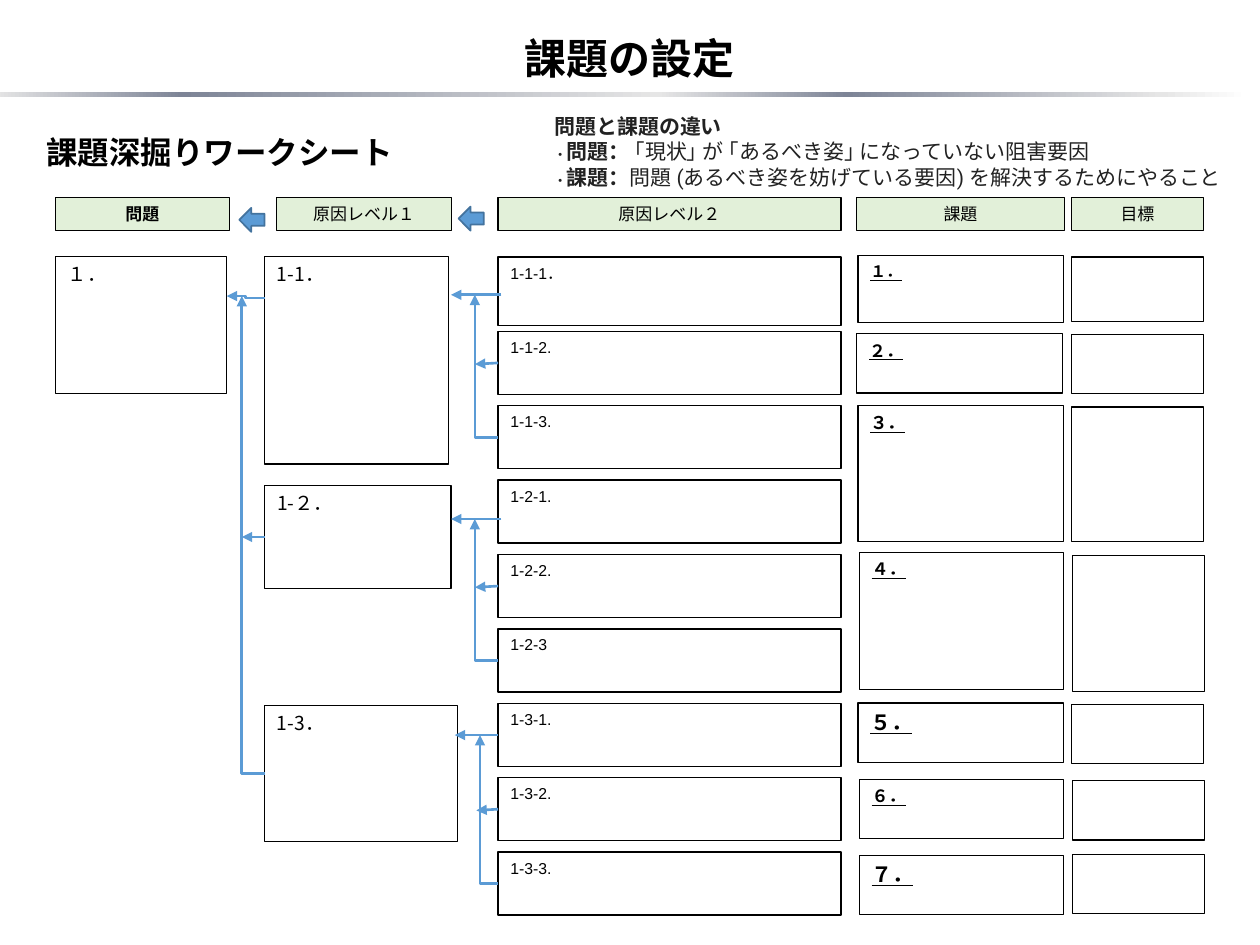
from dataclasses import dataclass

from lxml import etree
from pptx import Presentation
from pptx.dml.color import RGBColor
from pptx.enum import shapes, text
from pptx.oxml.ns import qn
from pptx.util import Pt

COLORS = {"ink": "000000", "note": "222222", "header": "E2F0D9", "arrow": "5B9BD5",
          "arrow_edge": "43739E", "white": "FFFFFF", "pale": "E6E6E6", "slate": "7D8496"}
CJK = "Noto Sans CJK JP"
RECT = shapes.MSO_SHAPE.RECTANGLE
STRAIGHT, ELBOW = shapes.MSO_CONNECTOR.STRAIGHT, shapes.MSO_CONNECTOR.ELBOW
LEFT_SIDE = 1


@dataclass
class Box:
    left: float
    top: float
    width: float
    height: float
    label: str = ""
    size: float = 9.7
    font: str = CJK
    bold: bool = False
    underline: bool = False


@dataclass
class Branch:
    """Three level 2 causes joined into one level 1 cause."""
    tip_x: float
    tip_y: float
    spine_x: float
    start_x: float
    middle_x: float


HEADERS = [
    Box(31.7, 113, 99.4, 18.7, "問題", bold=True),
    Box(158.1, 113, 100, 18.7, "原因レベル１"),
    Box(284.6, 113, 196, 18.7, "原因レベル２"),
    Box(489.6, 113, 118.6, 18.7, "課題"),
    Box(612.2, 113, 75.6, 18.7, "目標"),
]
PROBLEM = Box(31.7, 146.4, 97.9, 78.5, "１．", 11)
LEVEL_1 = [
    Box(151.2, 146.4, 105.1, 118.8, "1-1．", 11),
    Box(151.2, 277.4, 106.6, 59, "1-２．", 11),
    Box(151.2, 403.2, 110.2, 77.6, "1-3．", 11),
]
LEVEL_2_LABELS = ["1-1-1．", "1-1-2.", "1-1-3.", "1-2-1.", "1-2-2.", "1-2-3",
                  "1-3-1.", "1-3-2.", "1-3-3."]
LEVEL_2_TOP, LEVEL_2_PITCH = 146.9, 42.5
TASKS = [
    Box(490.3, 146.2, 117.4, 38.2, "１．", 9),
    Box(489.6, 190.8, 117.4, 33.8, "２．"),
    Box(490.3, 231.8, 117.4, 77.8, "３．", 10),
    Box(491, 315.6, 116.6, 78.5, "４．"),
    Box(490.3, 401.8, 117.4, 33.8, "５．", 12),
    Box(491, 445.5, 116.6, 33.8, "６．"),
    Box(491, 488.9, 116.6, 33.8, "７．", 12),
]
GOALS = [Box(left, top, 75.6, height) for left, top, height in [
    (612.2, 146.9, 36.7), (612.2, 191.3, 33.8), (612.2, 232.6, 77), (612.7, 317.5, 77.8),
    (612.2, 402.5, 33.8), (612.7, 446.2, 33.8), (612.7, 488.2, 33.8)]]
BRANCHES = [
    Branch(257.8, 168.5, 271.4, 286.5, 271.4),
    Branch(257.8, 296.6, 271.4, 286.5, 271.4),
    Branch(259.9, 420.1, 274.3, 284.5, 272.2),
]
NOTES = [("問題と課題の違い", ""),
         ("問題： ", "｢現状｣ が ｢あるべき姿｣ になっていない阻害要因"),
         ("課題：", "問題 (あるべき姿を妨げている要因) を解決するためにやること")]


def rgb(name: str) -> RGBColor:
    return RGBColor.from_string(COLORS[name])


def add_run(paragraph, words: str, color: str = "ink", **formats):
    run = paragraph.add_run()
    run.text = words
    for name, value in formats.items():
        setattr(run.font, name, value)
    run.font.color.rgb = rgb(color)
    east_asian = etree.SubElement(run.font._element, qn("a:ea"))
    east_asian.set("typeface", formats["name"])


def draw_shape(slide, kind, box: Box, fill: str | None, line: str | None, width: float = 0.75):
    shape = slide.shapes.add_shape(kind, *map(Pt, (box.left, box.top, box.width, box.height)))
    shape.shadow.inherit = False
    if fill:
        shape.fill.solid()
        shape.fill.fore_color.rgb = rgb(fill)
    else:
        shape.fill.background()
    if line:
        shape.line.color.rgb = rgb(line)
        shape.line.width = Pt(width)
    else:
        shape.line.fill.background()
    return shape


def draw_box(slide, box: Box, header: bool = False):
    shape = draw_shape(slide, RECT, box, "header" if header else None, "ink")
    if box.label:
        frame = shape.text_frame
        frame.word_wrap = True
        frame.vertical_anchor = text.MSO_ANCHOR.MIDDLE if header else text.MSO_ANCHOR.TOP
        paragraph = frame.paragraphs[0]
        paragraph.alignment = text.PP_ALIGN.CENTER if header else text.PP_ALIGN.LEFT
        add_run(paragraph, box.label, name=box.font, size=Pt(box.size),
                bold=box.bold, underline=box.underline)
    return shape


def draw_arrow(slide, kind, start, end, source=None, corner: bool = False):
    """Arrow to end, from the left side of source if given; corner makes one bend."""
    arrow = slide.shapes.add_connector(kind, *map(Pt, (*start, *end)))
    if source is not None:
        arrow.begin_connect(source, LEFT_SIDE)
    arrow.line.color.rgb = rgb("arrow")
    arrow.line.width = Pt(1.5)
    properties = arrow._element.spPr
    if corner:
        properties.find(qn("a:prstGeom")).set("prst", "bentConnector2")
    etree.SubElement(properties.find(qn("a:ln")), qn("a:tailEnd")).set("type", "triangle")
    etree.SubElement(properties, qn("a:effectLst"))


def draw_branch(slide, branch: Branch, causes):
    _, middle, last = causes
    draw_arrow(slide, ELBOW, (branch.start_x, branch.tip_y), (branch.tip_x, branch.tip_y))
    middle_y = (middle.top + middle.height / 2) / Pt(1)
    draw_arrow(slide, STRAIGHT, (284.6, middle_y), (branch.middle_x, middle_y + 0.7), middle)
    draw_arrow(slide, ELBOW, (284.6, last.top / Pt(1)), (branch.spine_x, branch.tip_y),
               last, corner=True)


def draw_title(slide):
    title = slide.shapes.title
    for name, value in {"left": 0, "top": 15.1, "width": 720, "height": 36}.items():
        setattr(title, name, Pt(value))
    title.text_frame.vertical_anchor = text.MSO_ANCHOR.MIDDLE
    paragraph = title.text_frame.paragraphs[0]
    paragraph.alignment = text.PP_ALIGN.CENTER
    add_run(paragraph, "課題の設定", name=CJK, size=Pt(24), bold=True)

    rule = draw_shape(slide, RECT, Box(-3.6, 52.6, 717.1, 2.9), None, None)
    rule.fill.gradient()
    rule.fill.gradient_angle = 180
    stops = rule._element.spPr.find(qn("a:gradFill")).find(qn("a:gsLst"))
    for stop in list(stops):
        stops.remove(stop)
    for percent, color in [(0, "white"), (7, "pale"), (32, "slate"), (47, "pale"),
                           (85, "slate"), (100, "pale")]:
        stop = etree.SubElement(stops, qn("a:gs"), pos=str(percent * 1000))
        etree.SubElement(stop, qn("a:srgbClr"), val=COLORS[color])


def add_textbox(slide, left: float, top: float, width: float, height: float):
    frame = slide.shapes.add_textbox(*map(Pt, (left, top, width, height))).text_frame
    frame.word_wrap = True
    return frame


def draw_notes(slide):
    heading = add_textbox(slide, 19.4, 72.7, 680.4, 28.8)
    heading.vertical_anchor = text.MSO_ANCHOR.MIDDLE
    add_run(heading.paragraphs[0], "課題深掘りワークシート", name=CJK, size=Pt(18), bold=True)

    notes = add_textbox(slide, 309.6, 61.2, 404, 51.1)
    notes.margin_right = 0
    style = {"color": "note", "name": "Roboto"}
    for index, (term, meaning) in enumerate(NOTES):
        paragraph = notes.add_paragraph() if index else notes.paragraphs[0]
        paragraph.line_spacing = Pt(14.5)
        if meaning:
            add_run(paragraph, "・", bold=True, size=Pt(7), **style)
        add_run(paragraph, term, bold=True, size=Pt(12), **style)
        if meaning:
            add_run(paragraph, meaning, bold=False, size=Pt(12), **style)


def main():
    deck = Presentation()
    deck.slide_width, deck.slide_height = Pt(720), Pt(540)
    slide = deck.slides.add_slide(deck.slide_layouts[5])
    draw_title(slide)
    draw_notes(slide)

    for header in HEADERS:
        draw_box(slide, header, header=True)
    for left, top in [(136.8, 118.8), (262.1, 118.1)]:
        draw_shape(slide, shapes.MSO_SHAPE.LEFT_ARROW, Box(left, top, 14.4, 13.7),
                   "arrow", "arrow_edge", 1)

    draw_box(slide, PROBLEM)
    _, second, third = [draw_box(slide, box) for box in LEVEL_1]
    causes = []
    for row, label in enumerate(LEVEL_2_LABELS):
        height = 36 if row else 39.2
        causes.append(draw_box(slide, Box(284.6, LEVEL_2_TOP + row * LEVEL_2_PITCH, 196,
                                          height, label, 9, "Arial")))
    for task in TASKS:
        task.bold = task.underline = True
        draw_box(slide, task)
    for goal in GOALS:
        draw_box(slide, goal)

    draw_arrow(slide, ELBOW, (151.2, 170.3), (129.6, 169.2))
    draw_arrow(slide, STRAIGHT, (151.2, 306.9), (138.2, 306.9), second)
    draw_arrow(slide, ELBOW, (151.2, 442), (138.2, 169.2), third, corner=True)
    for index, branch in enumerate(BRANCHES):
        draw_branch(slide, branch, causes[3 * index:3 * index + 3])
    deck.save("out.pptx")


if __name__ == "__main__":
    main()
